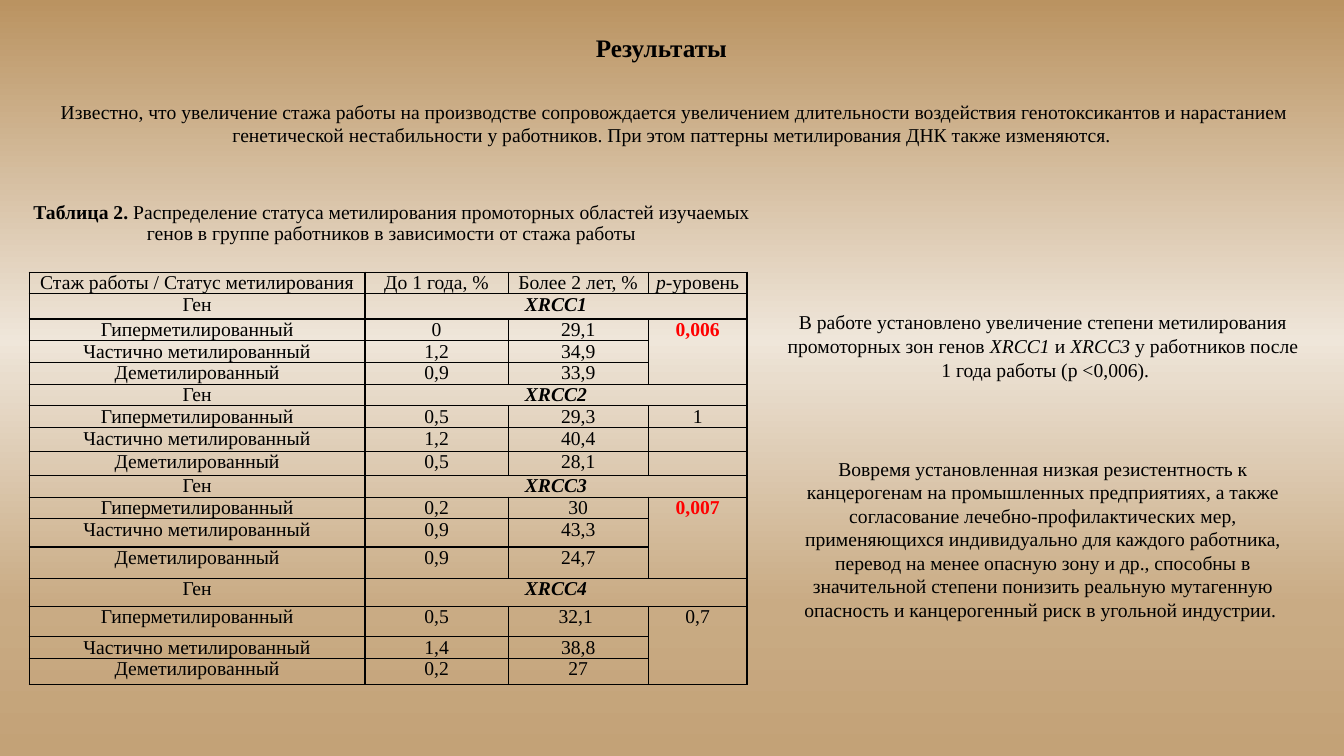
from lxml import etree
from pptx import Presentation
from pptx.dml.color import RGBColor
from pptx.enum.text import MSO_ANCHOR, PP_ALIGN
from pptx.oxml.ns import qn
from pptx.util import Inches, Pt

CENTER = PP_ALIGN.CENTER
TOP = MSO_ANCHOR.TOP
MIDDLE = MSO_ANCHOR.MIDDLE

FONT = "Times New Roman"
BODY_SIZE = 14
COLORS = {"text": "000000", "border": "000000", "significant": "FF0000"}
BACKGROUND_STOPS = [(0, "BA9361"), (45, "EFE6DA"), (50, "E9DDCD"), (80, "C9AB84"), (100, "C3A277")]

TEXT_BLOCKS = [
    {"box": (5.49, 0.17, 2.14, 0.64), "size": 18, "anchor": MIDDLE, "spacing": 0.9,
     "paragraphs": [[("Результаты", "bold")]]},
    {"box": (0.04, 0.94, 13.3, 0.57), "size": BODY_SIZE, "anchor": TOP, "spacing": 1.0,
     "paragraphs": [[("Известно, что увеличение стажа работы на производстве сопровождается увеличением "
                      "длительности воздействия генотоксикантов и нарастанием генетической нестабильности "
                      "у работников. При этом паттерны метилирования ДНК также изменяются. ", "")]]},
    {"box": (0.04, 1.9, 7.69, 0.64), "size": BODY_SIZE, "anchor": MIDDLE, "spacing": 0.9,
     "paragraphs": [[("Таблица 2. ", "bold"),
                     ("Распределение статуса метилирования промоторных областей изучаемых генов "
                      "в группе работников в зависимости от стажа работы", "")]]},
    {"box": (7.63, 3.03, 5.43, 0.81), "size": BODY_SIZE, "anchor": TOP, "spacing": 1.0,
     "paragraphs": [[("В работе установлено увеличение степени метилирования промоторных зон генов ", ""),
                     ("XRCC1", "italic"), (" и ", ""), ("XRCC3 ", "italic"), ("у работников после", "")],
                    [(" 1 года работы (p <0,006).", "")]]},
    {"box": (7.75, 4.48, 5.19, 1.75), "size": BODY_SIZE, "anchor": TOP, "spacing": 1.0,
     "paragraphs": [[("Вовремя установленная низкая резистентность к канцерогенам на промышленных "
                      "предприятиях, а также согласование лечебно-профилактических мер, применяющихся "
                      "индивидуально для каждого работника, перевод на менее опасную зону и др., способны "
                      "в значительной степени понизить реальную мутагенную опасность и канцерогенный риск "
                      "в угольной индустрии. ", "")]]},
]

HEADER = [[("Стаж работы / Статус метилирования", "")], [("До 1 года, %", "")],
          [("Более 2 лет, %", "")], [("p", "italic"), ("-уровень", "")]]
STATUSES = ["Гиперметилированный", "Частично метилированный", "Деметилированный"]
GENES = [
    {"name": "XRCC1", "values": [("0", "29,1"), ("1,2", "34,9"), ("0,9", "33,9")],
     "p": "0,006", "style": "bold significant", "merged": True},
    {"name": "XRCC2", "values": [("0,5", "29,3"), ("1,2", "40,4"), ("0,5", "28,1")],
     "p": "1", "style": "", "merged": False},
    {"name": "XRCC3", "values": [("0,2", "30"), ("0,9", "43,3"), ("0,9", "24,7")],
     "p": "0,007", "style": "bold significant", "merged": True},
    {"name": "XRCC4", "values": [("0,5", "32,1 "), ("1,4", "38,8"), ("0,2", "27")],
     "p": "0,7", "style": "", "merged": True},
]
TABLE_LEFT, TABLE_TOP = 0.29, 2.7
COLUMN_WIDTHS = [3.33, 1.42, 1.39, 0.98]
ROW_HEIGHTS = [0.21, 0.25, 0.21, 0.21, 0.21, 0.21, 0.21, 0.21, 0.23,
               0.21, 0.21, 0.28, 0.31, 0.28, 0.3, 0.21, 0.26]


def write_paragraph(paragraph, pieces, size, spacing=1.0):
    paragraph.alignment = CENTER
    paragraph.line_spacing = spacing
    for text, style in pieces:
        run = paragraph.add_run()
        run.text = text
        run.font.name = FONT
        run.font.size = Pt(size)
        run.font.bold = "bold" in style
        run.font.italic = "italic" in style
        color = "significant" if "significant" in style else "text"
        run.font.color.rgb = RGBColor.from_string(COLORS[color])


def add_text_block(slide, block):
    shape = slide.shapes.add_textbox(*map(Inches, block["box"]))
    frame = shape.text_frame
    frame.word_wrap = True
    frame.vertical_anchor = block["anchor"]
    for index, pieces in enumerate(block["paragraphs"]):
        paragraph = frame.add_paragraph() if index else frame.paragraphs[0]
        write_paragraph(paragraph, pieces, block["size"], block["spacing"])


def paint_background(slide):
    fill = slide.background.fill
    fill.gradient()
    fill.gradient_angle = 270
    stops = next(slide.element.iter(qn("a:gsLst")))
    for stop in list(stops):
        stops.remove(stop)
    for position, color in BACKGROUND_STOPS:
        stop = etree.SubElement(stops, qn("a:gs"), pos=str(position * 1000))
        etree.SubElement(stop, qn("a:srgbClr"), val=color)


def format_cell(cell):
    cell.margin_left = cell.margin_right = Inches(0.07)
    cell.margin_top = cell.margin_bottom = 0
    cell.fill.background()
    properties = cell._tc.get_or_add_tcPr()
    for index, side in enumerate(("a:lnL", "a:lnR", "a:lnT", "a:lnB")):
        line = etree.Element(qn(side), w=str(Pt(1)))
        fill = etree.SubElement(line, qn("a:solidFill"))
        etree.SubElement(fill, qn("a:srgbClr"), val=COLORS["border"])
        properties.insert(index, line)
    paragraph = cell.text_frame.paragraphs[0]
    if not paragraph.runs:
        etree.SubElement(paragraph._p, qn("a:endParaRPr"), sz=str(BODY_SIZE * 100))


def add_methylation_table(slide):
    table = slide.shapes.add_table(
        len(ROW_HEIGHTS), len(COLUMN_WIDTHS), Inches(TABLE_LEFT), Inches(TABLE_TOP),
        Inches(sum(COLUMN_WIDTHS)), Inches(sum(ROW_HEIGHTS))).table
    table.first_row = False
    table.horz_banding = False
    for column, width in zip(table.columns, COLUMN_WIDTHS):
        column.width = Inches(width)
    for row, height in zip(table.rows, ROW_HEIGHTS):
        row.height = Inches(height)

    def write_cell(row, column, pieces):
        write_paragraph(table.cell(row, column).text_frame.paragraphs[0], pieces, BODY_SIZE)

    for column, pieces in enumerate(HEADER):
        write_cell(0, column, pieces)
    for index, gene in enumerate(GENES):
        gene_row = 1 + index * (len(STATUSES) + 1)
        first, last = gene_row + 1, gene_row + len(STATUSES)
        write_cell(gene_row, 0, [("Ген", "")])
        write_cell(gene_row, 1, [(gene["name"], "bold italic")])
        table.cell(gene_row, 1).merge(table.cell(gene_row, 3))
        for row, (status, values) in enumerate(zip(STATUSES, gene["values"]), first):
            for column, text in enumerate((status, *values)):
                write_cell(row, column, [(text, "")])
        write_cell(first, 3, [(gene["p"], gene["style"])])
        if gene["merged"]:
            table.cell(first, 3).merge(table.cell(last, 3))
    for cell in table.iter_cells():
        format_cell(cell)


def main():
    presentation = Presentation()
    presentation.slide_width = Inches(13.33)
    presentation.slide_height = Inches(7.5)
    slide = presentation.slides.add_slide(presentation.slide_layouts[6])
    paint_background(slide)
    add_methylation_table(slide)
    for block in TEXT_BLOCKS:
        add_text_block(slide, block)
    presentation.save("out.pptx")


if __name__ == "__main__":
    main()
